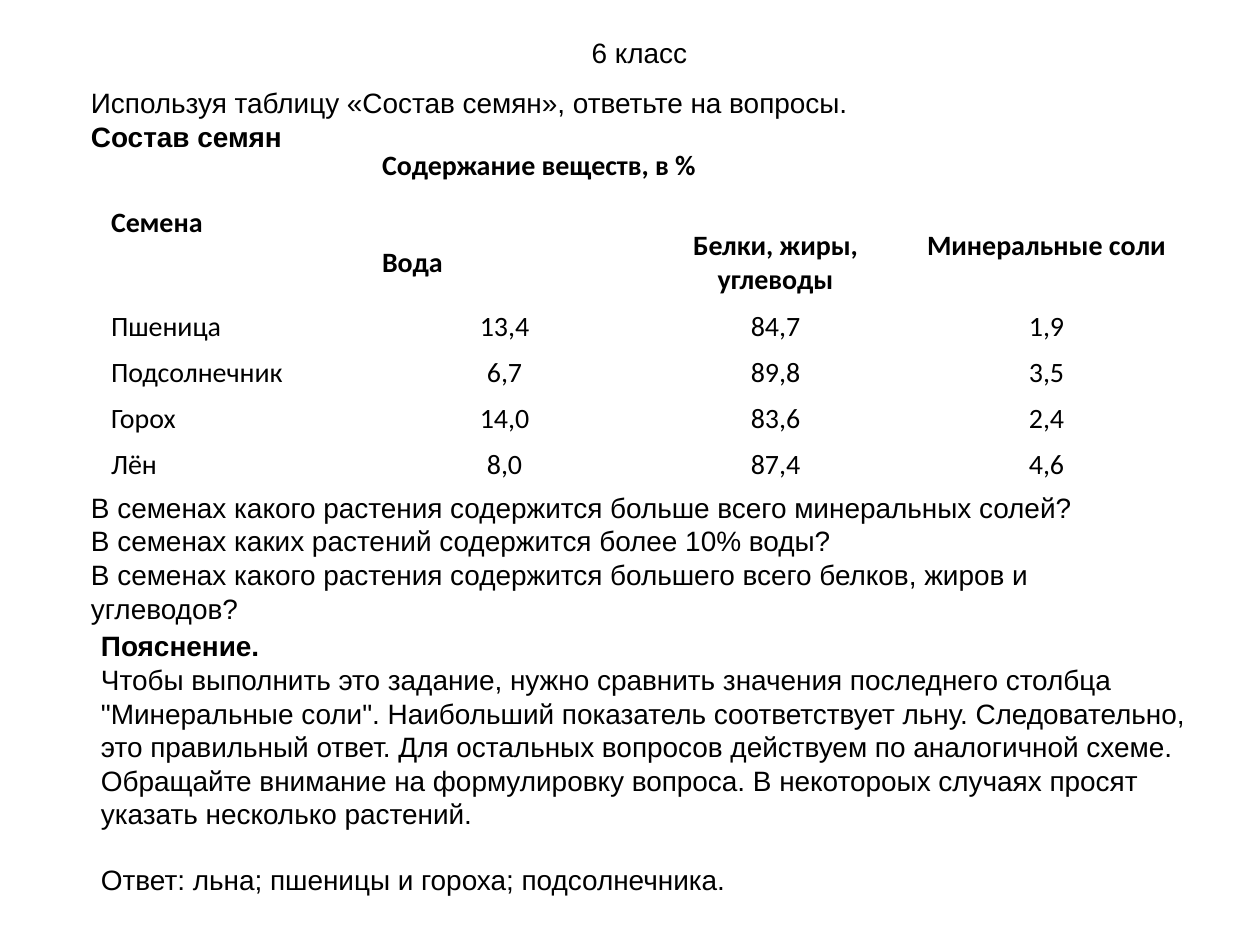
from dataclasses import dataclass

from pptx import Presentation
from pptx import util as u
from pptx.dml.color import RGBColor
from pptx.enum import text

PX = 914400 / 126
COLORS = {"ink": "000000"}
SIZE = u.Pt(16)
LINE = 34
PAD_X, PAD_Y = 13, 6


@dataclass
class Line:
    words: str
    bold: bool = False
    align: text.PP_ALIGN = text.PP_ALIGN.LEFT
    before: float = 0


@dataclass
class Block:
    left: int
    top: int
    width: int
    height: int
    lines: list[Line]
    anchor: text.MSO_ANCHOR = text.MSO_ANCHOR.MIDDLE


@dataclass
class Entry:
    row: int
    col: int
    line: Line
    lead: int = 0


def px(length: int) -> u.Emu:
    return u.Emu(round(length * PX))


def write(frame, lines: list[Line], font: str) -> None:
    frame.text = "\n".join(line.words for line in lines)
    for paragraph, line in zip(frame.paragraphs, lines):
        paragraph.alignment = line.align
        paragraph.line_spacing = 1.0
        paragraph.space_before = u.Pt(line.before)
        for run in paragraph.runs:
            run.font.name = font
            run.font.size = SIZE
            run.font.bold = line.bold
            run.font.color.rgb = RGBColor.from_string(COLORS["ink"])


def set_margins(target, lead: int = 0) -> None:
    target.margin_left = target.margin_right = px(PAD_X)
    target.margin_top = px(PAD_Y + lead)
    target.margin_bottom = px(PAD_Y)


def fill_block(shape, block: Block) -> None:
    shape.left, shape.top = px(block.left), px(block.top)
    shape.width, shape.height = px(block.width), px(block.height)
    frame = shape.text_frame
    frame.word_wrap = True
    frame.auto_size = text.MSO_AUTO_SIZE.NONE
    frame.vertical_anchor = block.anchor
    set_margins(frame)
    write(frame, block.lines, "Arial")


def fill_cell(table, entry: Entry) -> None:
    cell = table.cell(entry.row, entry.col)
    cell.vertical_anchor = text.MSO_ANCHOR.MIDDLE
    set_margins(cell, entry.lead)
    write(cell.text_frame, [entry.line], "Calibri")


CENTER = text.PP_ALIGN.CENTER
HEADERS = [
    Entry(0, 0, Line("Семена", True), LINE),
    Entry(0, 1, Line("Содержание веществ, в %", True), LINE),
    Entry(1, 1, Line("Вода", True), LINE),
    Entry(1, 2, Line("Белки, жиры, углеводы", True, CENTER), LINE),
    Entry(1, 3, Line("Минеральные соли", True, CENTER)),
]
SEEDS = [
    ("Пшеница", "13,4", "84,7", "1,9"),
    ("Подсолнечник", "6,7", "89,8", "3,5"),
    ("Горох", "14,0", "83,6", "2,4"),
    ("Лён", "8,0", "87,4", "4,6"),
]
ROW_HEIGHTS = [81, 113] + [46] * len(SEEDS)
COL_WIDTH = 271

HEADING = Block(118, 29, 1043, 47, [Line("6 класс", align=CENTER)])
TASK = Block(78, 80, 1123, 80, [
    Line("Используя таблицу «Состав семян», ответьте на вопросы."),
    Line("Состав семян", True),
], text.MSO_ANCHOR.TOP)
QUESTIONS = Block(78, 483, 1103, 149, [
    Line("В семенах какого растения содержится больше всего минеральных солей?"),
    Line("В семенах каких растений содержится более 10% воды?"),
    Line("В семенах какого растения содержится большего всего белков, жиров и углеводов?"),
])
EXPLANATION = Block(88, 620, 1113, 285, [
    Line("Пояснение.", True),
    Line("Чтобы выполнить это задание, нужно сравнить значения последнего столбца "
         "\"Минеральные соли\". Наибольший показатель соответствует льну. "
         "Следовательно, это правильный ответ. Для остальных вопросов действуем "
         "по аналогичной схеме. Обращайте внимание на формулировку вопроса. "
         "В некотороых случаях просят указать несколько растений."),
    Line("Ответ: льна; пшеницы и гороха; подсолнечника.", before=18.4),
])


def add_seed_table(slide) -> None:
    columns = len(SEEDS[0])
    table = slide.shapes.add_table(
        len(ROW_HEIGHTS), columns, px(98), px(108),
        px(COL_WIDTH * columns), px(sum(ROW_HEIGHTS))).table
    table.first_row = table.horz_banding = False
    for row, height in zip(table.rows, ROW_HEIGHTS):
        row.height = px(height)
    for column in table.columns:
        column.width = px(COL_WIDTH)
    for cell in table.iter_cells():
        cell.fill.background()
    table.cell(0, 0).merge(table.cell(1, 0))
    table.cell(0, 1).merge(table.cell(0, columns - 1))
    for header in HEADERS:
        fill_cell(table, header)
    for r, seed in enumerate(SEEDS, start=2):
        for c, value in enumerate(seed):
            align = CENTER if c else text.PP_ALIGN.LEFT
            fill_cell(table, Entry(r, c, Line(value, align=align)))


def main() -> None:
    deck = Presentation()
    deck.slide_width, deck.slide_height = px(1260), px(945)
    slide = deck.slides.add_slide(deck.slide_layouts[5])
    fill_block(slide.shapes.title, HEADING)
    add_seed_table(slide)
    for block in (TASK, QUESTIONS, EXPLANATION):
        fill_block(slide.shapes.add_textbox(0, 0, 0, 0), block)
    deck.save("out.pptx")


if __name__ == "__main__":
    main()
